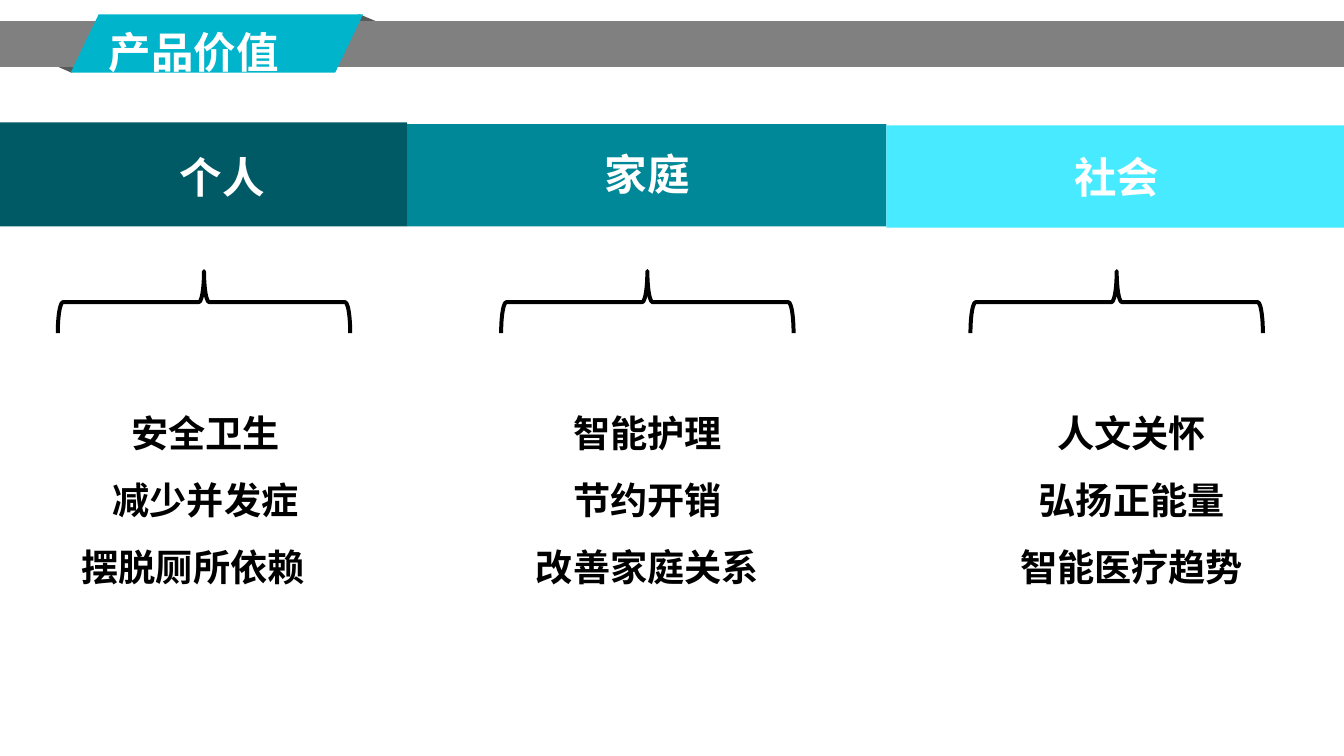
from collections import namedtuple

from lxml.etree import SubElement
from pptx import Presentation
from pptx.dml.color import RGBColor
from pptx.enum.shapes import MSO_SHAPE
from pptx.enum.text import MSO_ANCHOR, MSO_AUTO_SIZE, PP_ALIGN
from pptx.oxml.ns import qn
from pptx.util import Cm, Pt

Theme = namedtuple("Theme", "white black grey fold accent bars head body latin cjk")
theme = Theme(
    white="FFFFFF", black="000000", grey="808080", fold="595959", accent="00B4CB",
    bars=("005A66", "008798", "47EAFF"), head=Pt(32), body=Pt(28),
    latin="Arial", cjk="Noto Sans CJK SC",
)


def add_block(kind, box, color):
    """Add a plain filled shape; box is left, top, width, height in cm."""
    sp = s.shapes.add_shape(kind, *map(Cm, box))
    sp.shadow.inherit = False
    sp.fill.solid()
    sp.fill.fore_color.rgb = RGBColor.from_string(color)
    sp.line.fill.background()
    return sp


def write_text(sp, lines, size, color, latin, align, spacing):
    """Write one bold paragraph per line of text."""
    tf = sp.text_frame
    frame = {"word_wrap": True, "auto_size": MSO_AUTO_SIZE.NONE,
             "vertical_anchor": MSO_ANCHOR.TOP}
    for name, value in frame.items():
        setattr(tf, name, value)
    for i, line in enumerate(lines):
        p = tf.add_paragraph() if i else tf.paragraphs[0]
        para = {"alignment": align, "line_spacing": spacing, "space_before": Pt(0)}
        for name, value in para.items():
            setattr(p, name, value)
        r = p.add_run()
        r.text = line
        for name, value in {"size": size, "bold": True, "name": latin}.items():
            setattr(r.font, name, value)
        r.font.color.rgb = RGBColor.from_string(color)
        SubElement(r.font._element, qn("a:ea"), typeface=theme.cjk)


prs = Presentation()
prs.slide_width, prs.slide_height = Cm(35.71), Cm(20.09)
s = prs.slides.add_slide(prs.slide_layouts[5])

# Title ribbon with folded corners
add_block(MSO_SHAPE.ISOSCELES_TRIANGLE, (7.85, 0.38, 3.4, 0.71), theme.fold)
fold = add_block(MSO_SHAPE.ISOSCELES_TRIANGLE, (0.28, 1.22, 3.23, 0.71), theme.fold)
fold.rotation = 180
add_block(MSO_SHAPE.RECTANGLE, (0, 0.56, 35.71, 1.22), theme.grey)
ribbon = add_block(MSO_SHAPE.PARALLELOGRAM, (1.88, 0.38, 7.77, 1.55), theme.accent)
ribbon.adjustments[0] = 0.48

# Title, brought in front of the ribbon
title = s.shapes.title
place = {"left": Cm(2.64), "top": Cm(-0.1), "width": Cm(8.18), "height": Cm(2.31)}
for name, value in place.items():
    setattr(title, name, value)
write_text(title, ["产品价值"], theme.head, theme.white, theme.latin, PP_ALIGN.LEFT, 1.5)
s.shapes._spTree.append(title._element)

# Columns: heading, bar box, label centre and top, brace centre, list left and width,
# outdent of the last list line, list lines
columns = [
    ("个人", (0, 3.25, 10.82, 2.77), 5.91, 3.89, 5.42, 1.27, 8.38, 0.66,
     ["安全卫生", "减少并发症", "摆脱厕所依赖"]),
    ("家庭", (10.82, 3.3, 12.73, 2.72), 17.2, 3.81, 17.2, 12.55, 9.3, 0,
     ["智能护理", "节约开销", "改善家庭关系"]),
    ("社会", (23.55, 3.33, 12.16, 2.72), 29.68, 3.89, 29.67, 25.17, 9.8, 0,
     ["人文关怀", "弘扬正能量", "智能医疗趋势"]),
]
label_w, label_h = 4.4, 1.63
brace_w, brace_h, brace_mid = 1.65, 7.77, 8.03

for color, column in zip(theme.bars, columns):
    heading, bar, label_x, label_y, brace_x, left, width, outdent, lines = column

    # Heading bar and its label
    add_block(MSO_SHAPE.RECTANGLE, bar, color)
    label = s.shapes.add_textbox(
        Cm(label_x - label_w / 2), Cm(label_y), Cm(label_w), Cm(label_h))
    write_text(label, [heading], theme.head, theme.white, theme.cjk, PP_ALIGN.CENTER, 1.0)

    # Brace pointing up to the bar
    brace = s.shapes.add_shape(
        MSO_SHAPE.LEFT_BRACE, Cm(brace_x - brace_w / 2), Cm(brace_mid - brace_h / 2),
        Cm(brace_w), Cm(brace_h))
    brace.rotation = 90
    brace.shadow.inherit = False
    brace.fill.background()
    brace.line.color.rgb = RGBColor.from_string(theme.black)
    brace.line.width = Pt(3)

    # Value list
    values = s.shapes.add_textbox(
        Cm(left - outdent), Cm(10.19), Cm(width + outdent), Cm(5.64))
    write_text(values, lines, theme.body, theme.black, theme.cjk, PP_ALIGN.CENTER, 1.5)
    if outdent:
        for p in values.text_frame.paragraphs:
            p._p.get_or_add_pPr().set("marL", str(Cm(outdent)))
        p._p.get_or_add_pPr().set("indent", str(-Cm(outdent)))

prs.save("out.pptx")
